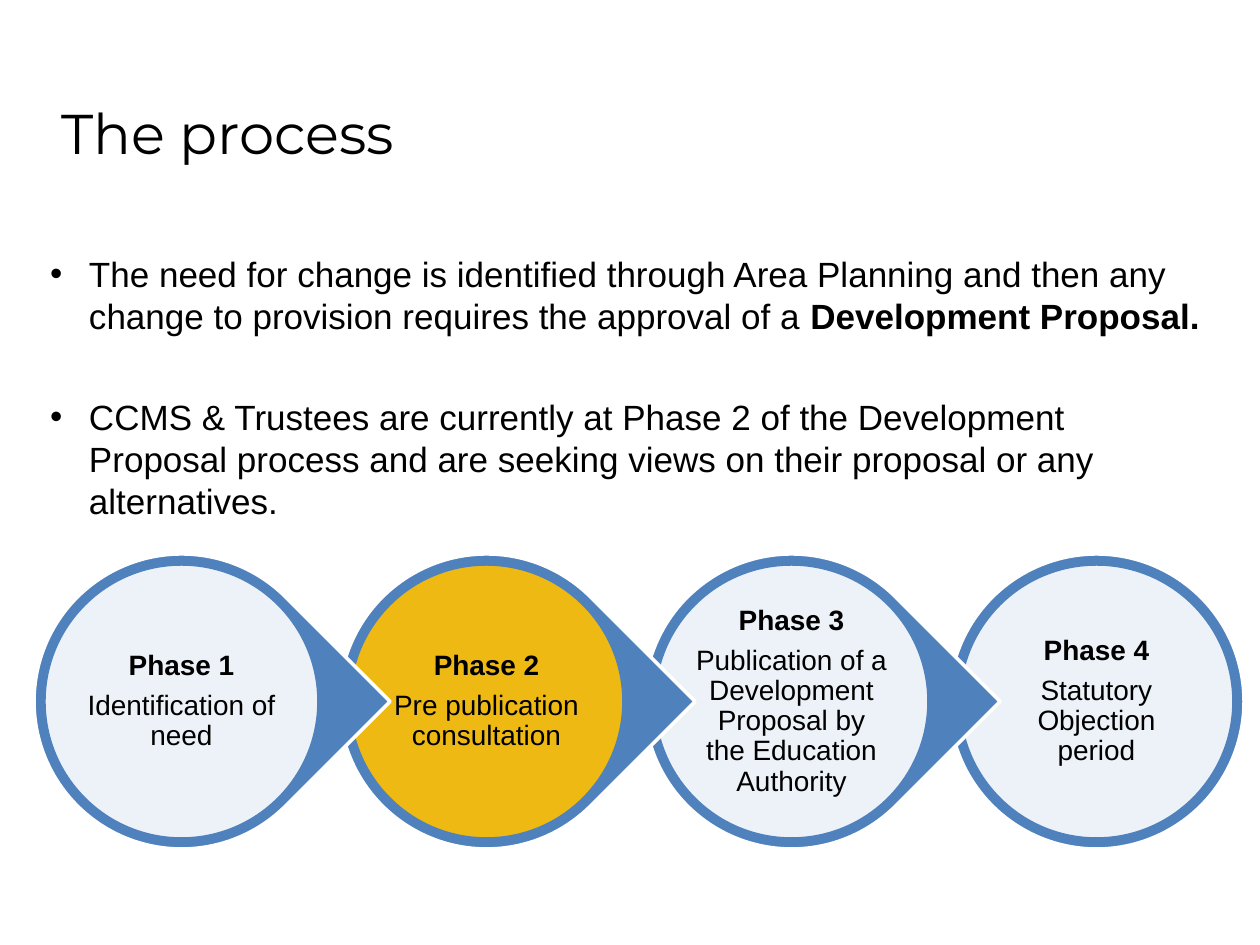
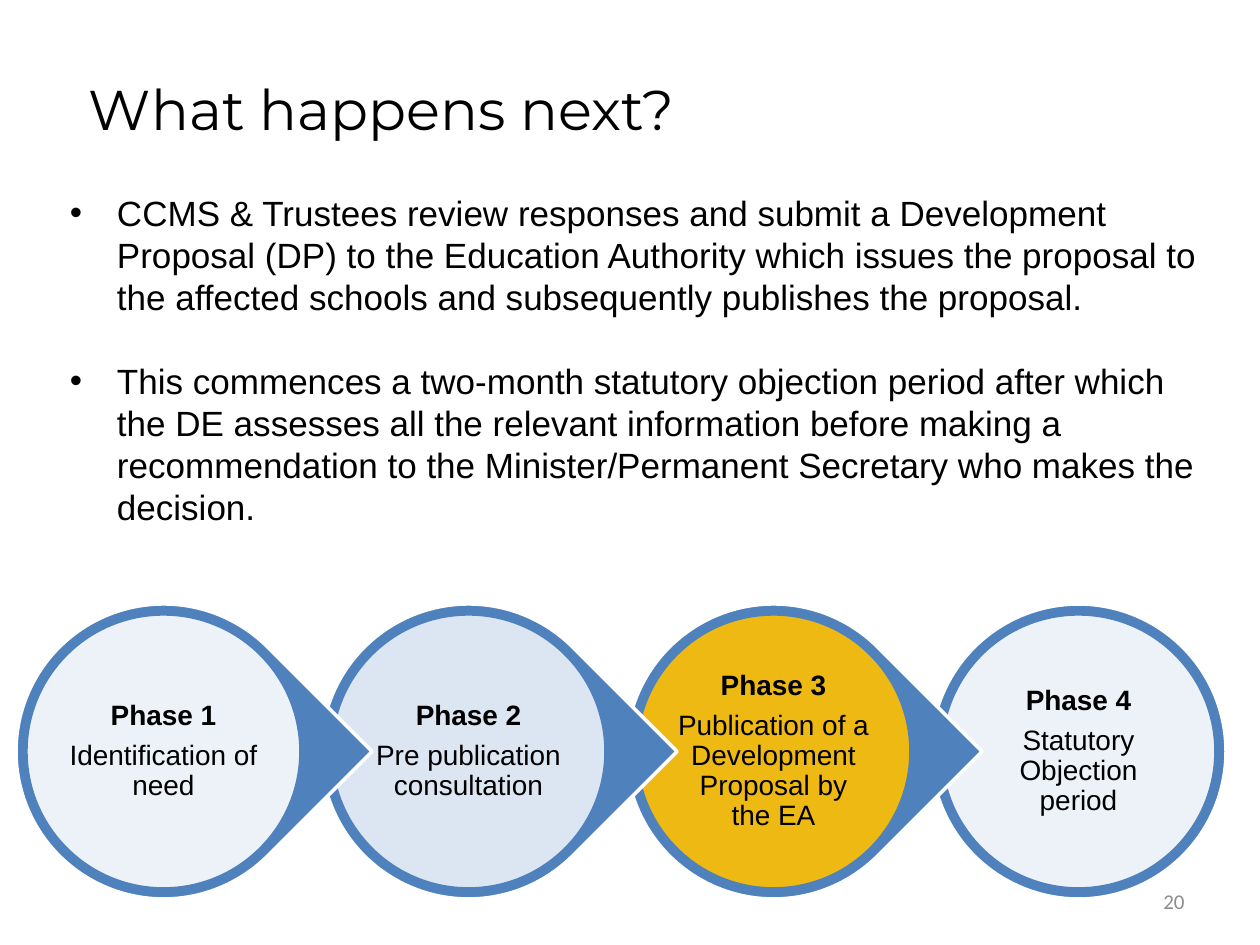
from lxml.etree import SubElement
from pptx import Presentation
from pptx.dml.color import RGBColor
from pptx.enum.shapes import MSO_SHAPE
from pptx.enum.text import MSO_ANCHOR, MSO_AUTO_SIZE, PP_ALIGN
from pptx.oxml.ns import qn
from pptx.util import Pt

EMU_PER_PX = 914400 / 126
BLACK, WHITE, BLUE, PALE_BLUE, AMBER, GREY = (
    "000000", "FFFFFF", "4F81BD", "DCE6F2", "FFC000", "8C8C8C")
TITLE_FONT, BODY_FONT, NUMBER_FONT = "Montserrat", "Arial", "Calibri"

# Phase strip measures
PHASE_STEP, RING_SIZE, DISC_SIZE, LABEL_SIZE = 305, 295, 275, 197
NBSP = chr(160)  # keeps "the" on the line of the word after it


def px(length):
    return round(length * EMU_PER_PX)


def place(part, box):
    part.left, part.top, part.width, part.height = map(px, box)


def rgb(hex_colour):
    return RGBColor.from_string(hex_colour)


def set_font(paragraph, name, size, colour=BLACK):
    paragraph.font.name = name
    paragraph.font.size = Pt(size)
    paragraph.font.color.rgb = rgb(colour)


def set_frame(frame, margin, anchor=MSO_ANCHOR.TOP):
    frame.word_wrap = True
    frame.auto_size = MSO_AUTO_SIZE.NONE
    frame.vertical_anchor = anchor
    frame.margin_left = frame.margin_right = px(margin)
    frame.margin_top = frame.margin_bottom = px(margin)


def add_title(slide, box, wording):
    title = slide.shapes.title
    place(title, box)
    title.text_frame.text = wording
    set_frame(title.text_frame, 6)
    paragraph = title.text_frame.paragraphs[0]
    paragraph.alignment = PP_ALIGN.LEFT
    set_font(paragraph, TITLE_FONT, 32)


def add_points(slide, box, points, indent, gap):
    """Each point is a pair: plain wording and a bold ending."""
    body = slide.placeholders[1]
    place(body, box)
    frame = body.text_frame
    set_frame(frame, 6)
    for index, (plain, strong) in enumerate(points):
        paragraph = frame.add_paragraph() if index else frame.paragraphs[0]
        paragraph.space_before = Pt(gap if index else 0)
        set_font(paragraph, BODY_FONT, 20)
        paragraph.add_run().text = plain
        if strong:
            ending = paragraph.add_run()
            ending.text = strong
            ending.font.bold = True
        properties = paragraph._p.get_or_add_pPr()
        properties.set("marL", str(px(indent)))
        properties.set("indent", str(-px(indent)))


def add_circle(slide, preset, centre, size, fill, line):
    x, y = centre
    circle = slide.shapes.add_shape(
        preset, px(x - size / 2), px(y - size / 2), px(size), px(size))
    circle.shadow.inherit = False
    circle.fill.solid()
    circle.fill.fore_color.rgb = rgb(fill)
    circle.line.color.rgb = rgb(line)
    circle.line.width = Pt(2)
    return circle


def add_phase(slide, centre, heading, wording, fill, is_last):
    # Ring, pointing to the next phase unless it is the last
    preset = MSO_SHAPE.OVAL if is_last else MSO_SHAPE.TEAR
    ring = add_circle(slide, preset, centre, RING_SIZE, BLUE, WHITE)
    if not is_last:
        ring.adjustments[0] = 1
        ring.rotation = 45

    # Disc, slightly see-through except where pale blue
    disc = add_circle(slide, MSO_SHAPE.OVAL, centre, DISC_SIZE, fill, BLUE)
    if fill != PALE_BLUE:
        colour = disc._element.spPr.find(qn("a:solidFill"))[0]
        SubElement(colour, qn("a:alpha"), val="90000")

    # Label
    x, y = (middle - LABEL_SIZE / 2 for middle in centre)
    label = slide.shapes.add_textbox(
        px(x), px(y), px(LABEL_SIZE), px(LABEL_SIZE))
    frame = label.text_frame
    set_frame(frame, 2.5, MSO_ANCHOR.MIDDLE)
    frame.text = f"{heading}\n{wording}"
    for paragraph in frame.paragraphs:
        paragraph.alignment = PP_ALIGN.CENTER
        paragraph.line_spacing = 0.9
        paragraph.space_after = Pt(5.6)
        set_font(paragraph, BODY_FONT, 16)
    frame.paragraphs[0].font.bold = True


def add_phase_strip(slide, left, top, publisher, fills):
    wordings = [
        "Identification of need",
        "Pre publication consultation",
        f"Publication of a Development Proposal by the{NBSP}{publisher}",
        "Statutory Objection period",
    ]
    last = len(wordings) - 1
    # From the last phase back, so each pointer overlaps the next ring
    for index in range(last, -1, -1):
        centre = (left + index * PHASE_STEP + RING_SIZE / 2,
                  top + RING_SIZE / 2)
        add_phase(slide, centre, f"Phase {index + 1}", wordings[index],
                  fills[index], index == last)


def add_slide_number(slide, box, number):
    holder = slide.shapes.add_textbox(*map(px, box))
    frame = holder.text_frame
    frame.word_wrap = True
    frame.vertical_anchor = MSO_ANCHOR.MIDDLE
    frame.text = number
    frame.paragraphs[0].alignment = PP_ALIGN.RIGHT
    set_font(frame.paragraphs[0], NUMBER_FONT, 12, GREY)


def build_process(slide):
    add_title(slide, (55, 92, 1105, 81), "The process")
    add_points(slide, (44, 246, 1166, 340), [
        ("The need for change is identified through Area Planning and then "
         "any change to provision requires the approval of a ",
         "Development Proposal."),
        ("CCMS & Trustees are currently at Phase 2 of the Development "
         "Proposal process and are seeking views on their proposal or any "
         "alternatives.", ""),
    ], indent=39, gap=34)
    add_phase_strip(slide, 34, 554, "Education Authority",
                    [WHITE, AMBER, WHITE, WHITE])


def build_next_steps(slide):
    add_title(slide, (83, 68, 1022, 81), "What happens next?")
    add_points(slide, (64, 185, 1148, 432), [
        ("CCMS & Trustees review responses and submit a Development Proposal "
         "(DP) to the Education Authority which issues the proposal to the "
         "affected schools and subsequently publishes the proposal.", ""),
        ("This commences a two-month statutory objection period after which "
         "the DE assesses all the relevant information before making a "
         "recommendation to the Minister/Permanent Secretary who makes the "
         "decision.", ""),
    ], indent=47, gap=24)
    add_phase_strip(slide, 16, 604, "EA", [WHITE, PALE_BLUE, AMBER, WHITE])
    add_slide_number(slide, (903, 876, 294, 50), "20")


def main():
    deck = Presentation()
    deck.slide_width, deck.slide_height = px(1260), px(945)
    title_and_content = deck.slide_layouts[1]
    for build in (build_process, build_next_steps):
        build(deck.slides.add_slide(title_and_content))
    deck.save("out.pptx")


if __name__ == "__main__":
    main()
